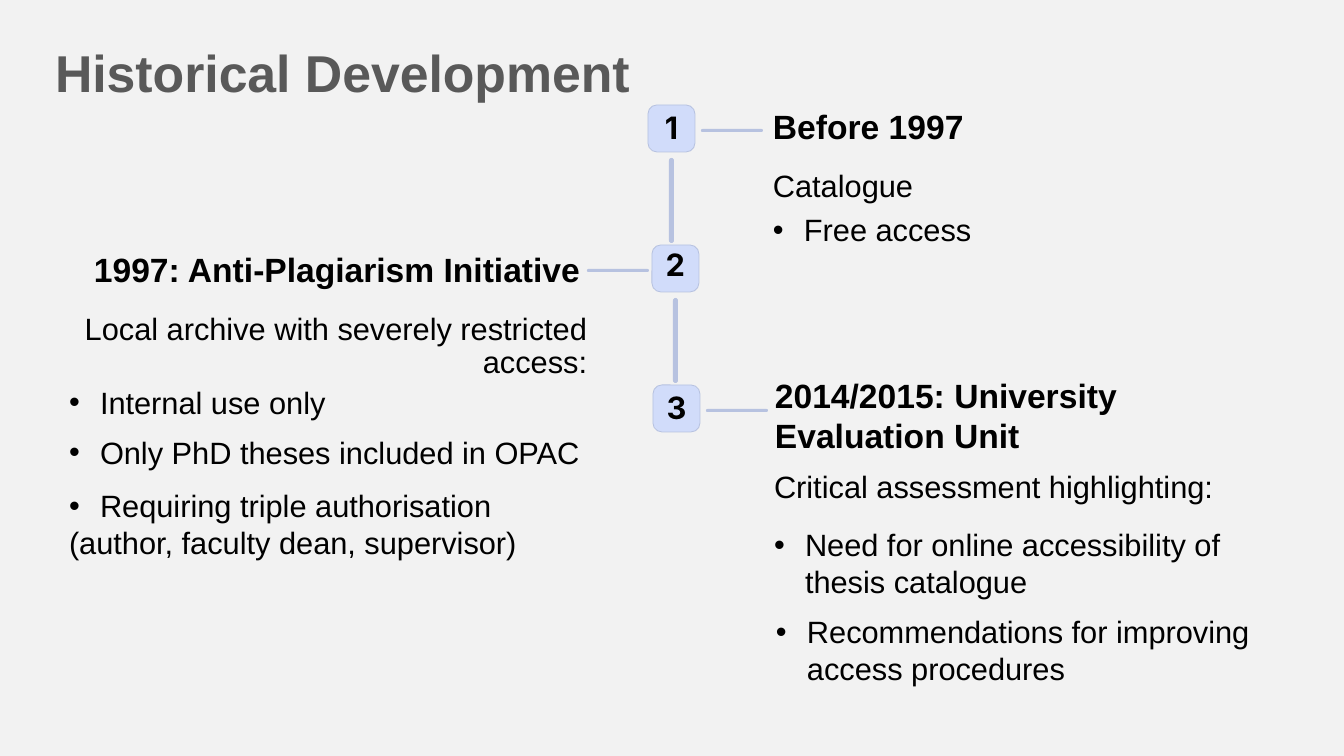
import pptx
import pptx.dml.color
import pptx.enum.shapes
import pptx.enum.text
import pptx.oxml.ns
import pptx.util
from lxml import etree

WIDTH, HEIGHT = 1344, 756
PX = 12192000 / WIDTH
COLORS = {"page": "F2F2F2", "title": "595959", "text": "000000", "badge": "D1DCFA", "rail": "B7C2E0"}
BADGE, BADGE_STEP, INDENT = 47, 140, 31
ARM, RAIL = (62, 3), (5, 85)
LEFT, CENTER, RIGHT = (getattr(pptx.enum.text.PP_ALIGN, side) for side in ("LEFT", "CENTER", "RIGHT"))

MILESTONES = [
    {"number": "1", "badge_left": 648, "digit": (4, None), "arm": 53, "passages": [
        ((773, 106, 396, 40), ["Before 1997"], {"size": 24, "bold": True}),
        ((773, 167, 349, 67), ["Catalogue"], {}),
        ((773, 211, 253, 37), ["Free access"], {"bullet": True}),
    ]},
    {"number": "2", "badge_left": 652, "digit": (7, 22.1), "arm": -65, "passages": [
        ((60, 257, 520, 32), ["1997: Anti-Plagiarism Initiative"],
         {"size": 24, "bold": True, "align": RIGHT, "leading": 22.9}),
        ((9, 313, 578, 100), ["Local archive with severely restricted access:"],
         {"align": RIGHT, "leading": 23.8}),
        ((69, 387, 540, 33), ["Internal use only"], {"bullet": True, "leading": 23.8}),
        ((69, 437, 540, 33), ["Only PhD theses included in OPAC"], {"bullet": True, "leading": 23.8}),
        ((69, 487, 560, 67), ["Requiring triple authorisation", "(author, faculty dean, supervisor)"],
         {"bullet": True}),
    ]},
    {"number": "3", "badge_left": 653, "digit": (10, 22.1), "arm": 53, "passages": [
        ((775, 375, 432, 80), ["2014/2015: University", "Evaluation Unit"], {"size": 24, "bold": True}),
        ((774, 471, 495, 33), ["Critical assessment highlighting:"], {"leading": 23.8}),
        ((774, 526, 495, 67), ["Need for online accessibility of thesis catalogue"], {"bullet": True}),
        ((776, 613, 495, 67), ["Recommendations for improving access procedures"], {"bullet": True}),
    ]},
]


def px(length):
    """Turn px into EMU."""
    return pptx.util.Emu(round(length * PX))


def color(name):
    """Look up a named colour."""
    return pptx.dml.color.RGBColor.from_string(COLORS[name])


def add_bullet(paragraph):
    """Give a paragraph a hanging bullet."""
    properties = paragraph._p.get_or_add_pPr()
    properties.set("marL", str(px(INDENT)))
    properties.set("indent", str(-px(INDENT)))
    etree.SubElement(properties, pptx.oxml.ns.qn("a:buFont"), typeface="Arial")
    etree.SubElement(properties, pptx.oxml.ns.qn("a:buChar"), char="•")


def add_passage(slide, box, lines, size=22, bold=False, align=LEFT, leading=None,
                bullet=False, font="Arial", ink="text"):
    """Place lines of text in a box, with a bullet on the first if asked."""
    frame = slide.shapes.add_textbox(*map(px, box)).text_frame
    frame.word_wrap = True
    frame.margin_left = frame.margin_right = frame.margin_top = frame.margin_bottom = 0
    frame.text = "\n".join(lines)
    if bullet:
        add_bullet(frame.paragraphs[0])
    for paragraph in frame.paragraphs:
        paragraph.alignment = align
        if leading:
            paragraph.line_spacing = pptx.util.Pt(leading)
        for run in paragraph.runs:
            run.font.name = font
            run.font.size = pptx.util.Pt(size)
            run.font.bold = bold
            run.font.color.rgb = color(ink)


def add_block(slide, box, fill, rounding=0.5, outlined=False):
    """Draw a rounded bar or badge."""
    block = slide.shapes.add_shape(pptx.enum.shapes.MSO_SHAPE.ROUNDED_RECTANGLE, *map(px, box))
    block.adjustments[0] = rounding
    block.shadow.inherit = False
    block.fill.solid()
    block.fill.fore_color.rgb = color(fill)
    if outlined:
        block.line.color.rgb = color("rail")
        block.line.width = pptx.util.Pt(0.6)
    else:
        block.line.fill.background()


def add_milestone(slide, left, top, milestone, has_next):
    """Draw a numbered badge with its arm, its rail to the next one and its passages."""
    add_block(slide, (left + milestone["arm"], top + 24, *ARM), "rail")
    if has_next:
        add_block(slide, (left + 21, top + 53, *RAIL), "rail")
    add_block(slide, (left, top, BADGE, BADGE), "badge", 0.19, outlined=True)
    drop, leading = milestone["digit"]
    add_passage(slide, (left, top + drop, BADGE, 39), [milestone["number"]], size=22, bold=True,
                align=CENTER, leading=leading, font="Inter")
    for box, lines, style in milestone["passages"]:
        add_passage(slide, box, lines, **style)


def add_timeline(slide, top):
    """Stack the milestones at equal steps."""
    for index, milestone in enumerate(MILESTONES):
        add_milestone(slide, milestone["badge_left"], top + index * BADGE_STEP, milestone,
                      index < len(MILESTONES) - 1)


def main():
    """Build and save the slide."""
    deck = pptx.Presentation()
    deck.slide_width, deck.slide_height = px(WIDTH), px(HEIGHT)
    slide = deck.slides.add_slide(deck.slide_layouts[6])
    slide.background.fill.solid()
    slide.background.fill.fore_color.rgb = color("page")
    add_passage(slide, (55, 38, 892, 66), ["Historical Development"], size=37, bold=True,
                leading=46.2, ink="title")
    add_timeline(slide, 105)
    deck.save("out.pptx")


if __name__ == "__main__":
    main()
